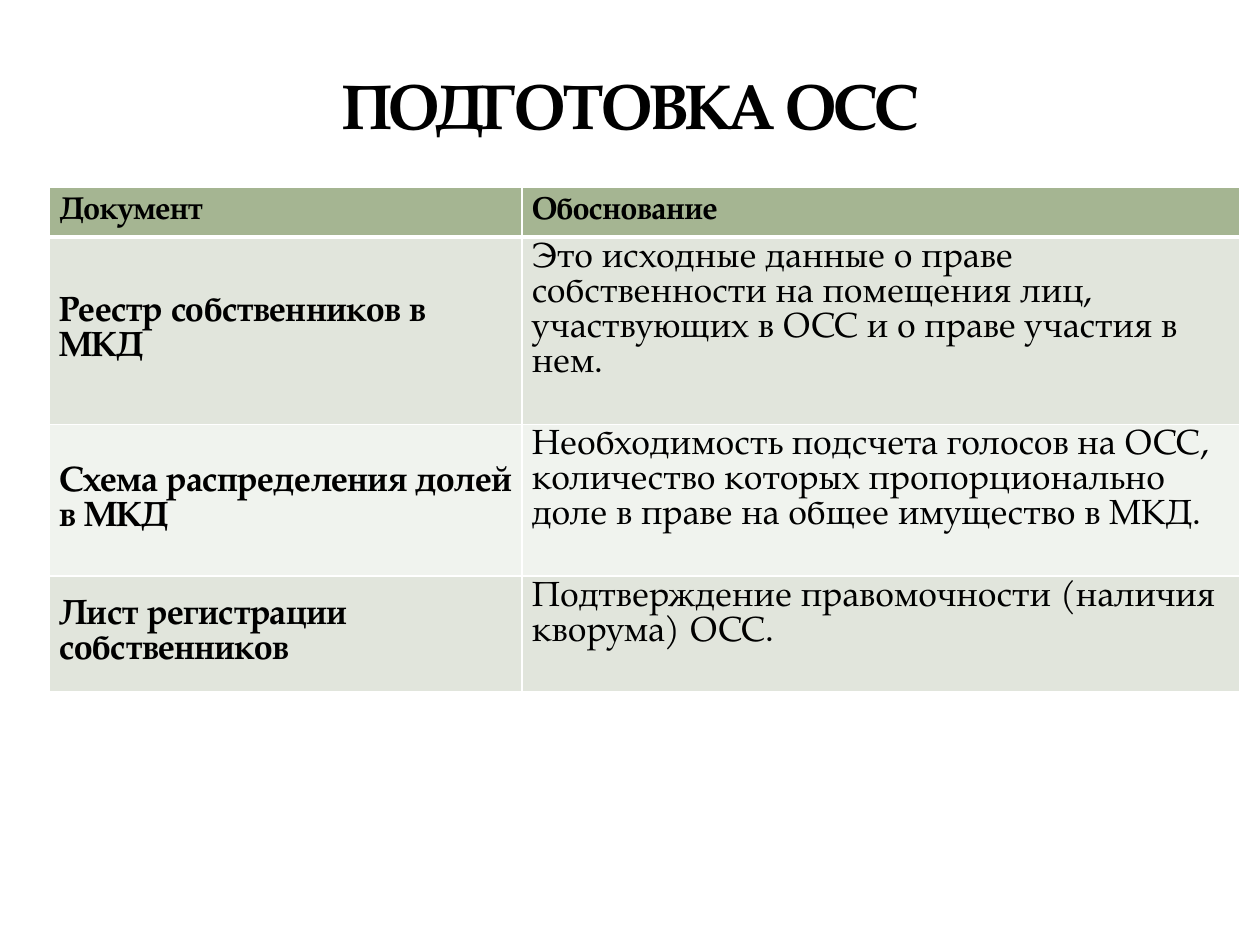
from dataclasses import dataclass

from lxml.etree import SubElement
from pptx import Presentation
from pptx.dml.color import RGBColor
from pptx.enum.text import MSO_ANCHOR, PP_ALIGN
from pptx.oxml.ns import qn
from pptx.util import Cm, Pt

FONT = "TeX Gyre Pagella"
COLORS = {
    "text": "000000",
    "header": "A5B592",
    "odd_row": "E1E5DC",
    "even_row": "F0F3EE",
    "border": "FFFFFF",
}
COLUMN_WIDTHS = (9.52, 14.48)


@dataclass(frozen=True)
class DocumentRow:
    document: str
    reason: str
    height: float


HEADER = DocumentRow("Документ", "Обоснование", 1.0)
DOCUMENTS = (
    DocumentRow(
        "Реестр собственников в МКД",
        "Это исходные данные о праве собственности на помещения лиц, "
        "участвующих в ОСС и о праве участия в нем.",
        3.78,
    ),
    DocumentRow(
        "Схема распределения долей в МКД",
        "Необходимость подсчета голосов на ОСС, количество которых "
        "пропорционально доле в праве на общее имущество в МКД.",
        3.05,
    ),
    DocumentRow(
        "Лист регистрации собственников",
        "Подтверждение правомочности (наличия кворума) ОСС.",
        2.33,
    ),
)


def write_text(frame, text: str, *, size: float, bold: bool = False,
               align=PP_ALIGN.LEFT, line_pitch: float | None = None,
               letter_spacing: float = 0) -> None:
    paragraph = frame.paragraphs[0]
    paragraph.alignment = align
    if line_pitch:
        paragraph.line_spacing = Pt(line_pitch)
    run = paragraph.add_run()
    run.text = text
    run.font.name = FONT
    run.font.size = Pt(size)
    run.font.bold = bold
    run.font.color.rgb = RGBColor.from_string(COLORS["text"])
    if letter_spacing:
        run._r.get_or_add_rPr().set("spc", str(round(letter_spacing * 100)))


def set_borders(cell, top: float, bottom: float) -> None:
    """Draw solid borders, 1 pt wide at the sides."""
    properties = cell._tc.get_or_add_tcPr()
    widths = {"a:lnL": 1, "a:lnR": 1, "a:lnT": top, "a:lnB": bottom}
    for position, (side, width) in enumerate(widths.items()):
        line = SubElement(properties, qn(side), w=str(Pt(width)))
        fill = SubElement(line, qn("a:solidFill"))
        SubElement(fill, qn("a:srgbClr"), val=COLORS["border"])
        properties.insert(position, line)


def add_title(slide, text: str) -> None:
    title = slide.shapes.title
    title.left, title.top = Cm(1.27), Cm(0.43)
    title.width, title.height = Cm(22.86), Cm(2.57)
    title.text_frame.vertical_anchor = MSO_ANCHOR.BOTTOM
    write_text(title.text_frame, text, size=36, bold=True,
               align=PP_ALIGN.CENTER, letter_spacing=-1)


def add_document_table(slide, rows: tuple[DocumentRow, ...]) -> None:
    table = slide.shapes.add_table(
        len(rows), len(COLUMN_WIDTHS), Cm(1.0), Cm(3.78),
        Cm(sum(COLUMN_WIDTHS)), Cm(sum(row.height for row in rows)),
    ).table
    for column, width in zip(table.columns, COLUMN_WIDTHS):
        column.width = Cm(width)
    for index, row in enumerate(rows):
        table.rows[index].height = Cm(row.height)
        is_header = index == 0
        band = "header" if is_header else "odd_row" if index % 2 else "even_row"
        for column, text in enumerate((row.document, row.reason)):
            is_reason = column == 1 and not is_header
            cell = table.cell(index, column)
            cell.fill.solid()
            cell.fill.fore_color.rgb = RGBColor.from_string(COLORS[band])
            cell.margin_left = cell.margin_right = Cm(0.2)
            cell.margin_top = cell.margin_bottom = Cm(0.1)
            cell.vertical_anchor = MSO_ANCHOR.TOP if is_reason else MSO_ANCHOR.MIDDLE
            set_borders(cell, top=3 if index == 1 else 1,
                        bottom=3 if is_header else 1)
            write_text(cell.text_frame, text, size=18 if is_header else 20,
                       bold=not is_reason, line_pitch=18 if is_header else 20)


def main() -> None:
    presentation = Presentation()
    presentation.slide_width, presentation.slide_height = Cm(25.4), Cm(19.05)
    slide = presentation.slides.add_slide(presentation.slide_layouts[5])
    add_document_table(slide, (HEADER, *DOCUMENTS))
    add_title(slide, "ПОДГОТОВКА ОСС")
    presentation.save("out.pptx")


if __name__ == "__main__":
    main()
